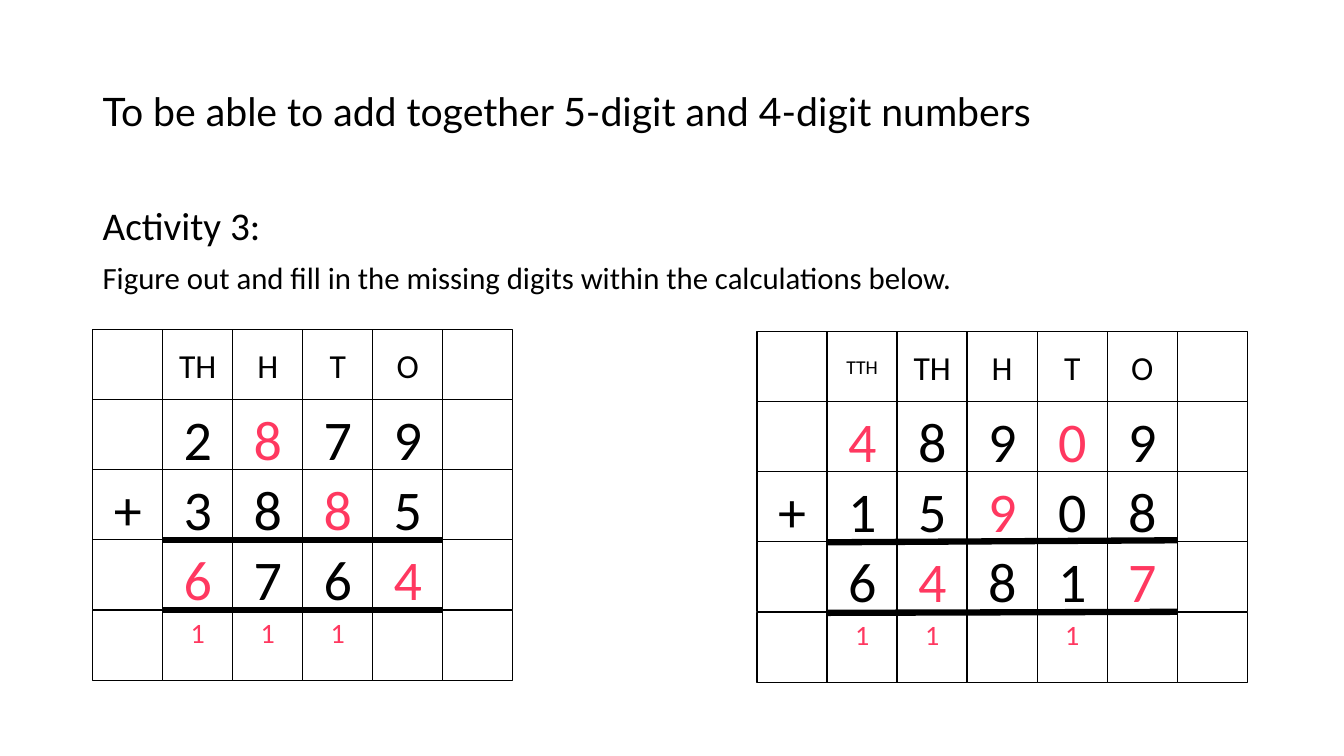
from lxml import etree
from pptx import Presentation
from pptx.dml.color import RGBColor
from pptx.enum import shapes, text
from pptx.oxml import ns
from pptx.util import Inches, Pt

BLACK = RGBColor(0x00, 0x00, 0x00)
WHITE = RGBColor(0xFF, 0xFF, 0xFF)
PINK = RGBColor(0xFF, 0x38, 0x60)

CELL = Inches(25) // 36
TOP, MID = text.MSO_ANCHOR.TOP, text.MSO_ANCHOR.MIDDLE

# A star marks a digit that was missing; a dot marks an empty cell
SUM_4 = [
    ". TH H T O .",
    ". 2 *8 7 9 .",
    "+ 3 8 *8 5 .",
    ". *6 7 6 *4 .",
    ". *1 *1 *1 . .",
]
SUM_5 = [
    ". TTH TH H T O .",
    ". *4 8 9 *0 9 .",
    "+ 1 5 *9 0 8 .",
    ". 6 *4 8 1 *7 .",
    ". *1 *1 . *1 . .",
]


def add_run(para, words, size, color=BLACK, font="Calibri"):
    run = para.add_run()
    run.text = words
    run.font.size = Pt(size)
    run.font.name = font
    run.font.color.rgb = color


def add_text(slide, box, lines, anchor=TOP, font="Calibri"):
    """Left-aligned text box; lines holds (words, size) pairs."""
    frame = slide.shapes.add_textbox(*map(Inches, box)).text_frame
    frame.word_wrap = True
    frame.vertical_anchor = anchor
    for i, (words, size) in enumerate(lines):
        para = frame.add_paragraph() if i else frame.paragraphs[0]
        para.line_spacing = 0.9
        para.space_before = Pt(10 if i else 0)
        add_run(para, words, size, font=font)


def add_cell(slide, left, top, mark, size, anchor):
    cell = slide.shapes.add_shape(
        shapes.MSO_SHAPE.RECTANGLE, left, top, CELL, CELL)
    cell.shadow.inherit = False
    cell.fill.solid()
    cell.fill.fore_color.rgb = WHITE
    cell.line.color.rgb = BLACK
    cell.line.width = Pt(1)
    if mark == ".":
        return
    frame = cell.text_frame
    frame.word_wrap = True
    frame.vertical_anchor = anchor
    para = frame.paragraphs[0]
    para.alignment = text.PP_ALIGN.CENTER
    color = PINK if mark.startswith("*") else BLACK
    add_run(para, mark.lstrip("*"), size, color)


def add_rule(slide, x1, y1, x2, y2):
    rule = slide.shapes.add_connector(
        shapes.MSO_CONNECTOR.STRAIGHT, x1, y1, x2, y2)
    rule.line.color.rgb = BLACK
    rule.line.width = Pt(4.5)
    etree.SubElement(rule._element.spPr, ns.qn("a:effectLst"))


def add_sum(slide, left, top, rows, rules):
    """Grid of squares; rules holds start and end heights below the top."""
    left, top = Inches(left), Inches(top)
    last = len(rows) - 1
    for r, row in enumerate(rows):
        # The carry row sits slightly apart
        y = top + r * CELL + (Inches(0.01) if r == last else 0)
        for c, mark in enumerate(row.split()):
            size = 24 if r == 0 else 20 if r == last else 40
            if mark == "TTH":
                size = 14
            add_cell(slide, left + c * CELL, y, mark, size,
                     TOP if r else MID)
    cols = len(rows[0].split())
    for start, end in rules:
        add_rule(slide, left + CELL, top + Inches(start),
                 left + (cols - 1) * CELL, top + Inches(end))


def main():
    prs = Presentation()
    prs.slide_width, prs.slide_height = Inches(13.33), Inches(7.5)
    slide = prs.slides.add_slide(prs.slide_layouts[6])

    # Title and task
    add_text(slide, (0.92, 0.4, 9.6, 1.45),
             [("To be able to add together 5-digit and 4-digit numbers", 28)],
             MID, "Lato")
    add_text(slide, (0.92, 2, 11.5, 4.76), [
        ("Activity 3:", 28),
        ("Figure out and fill in the missing digits within the "
         "calculations below.", 22),
    ])

    # Column additions
    add_sum(slide, 0.92, 3.27, SUM_4, [(2.09, 2.09), (2.78, 2.78)])
    add_sum(slide, 7.51, 3.29, SUM_5, [(2.09, 2.07), (2.79, 2.78)])

    prs.save("out.pptx")


if __name__ == "__main__":
    main()
